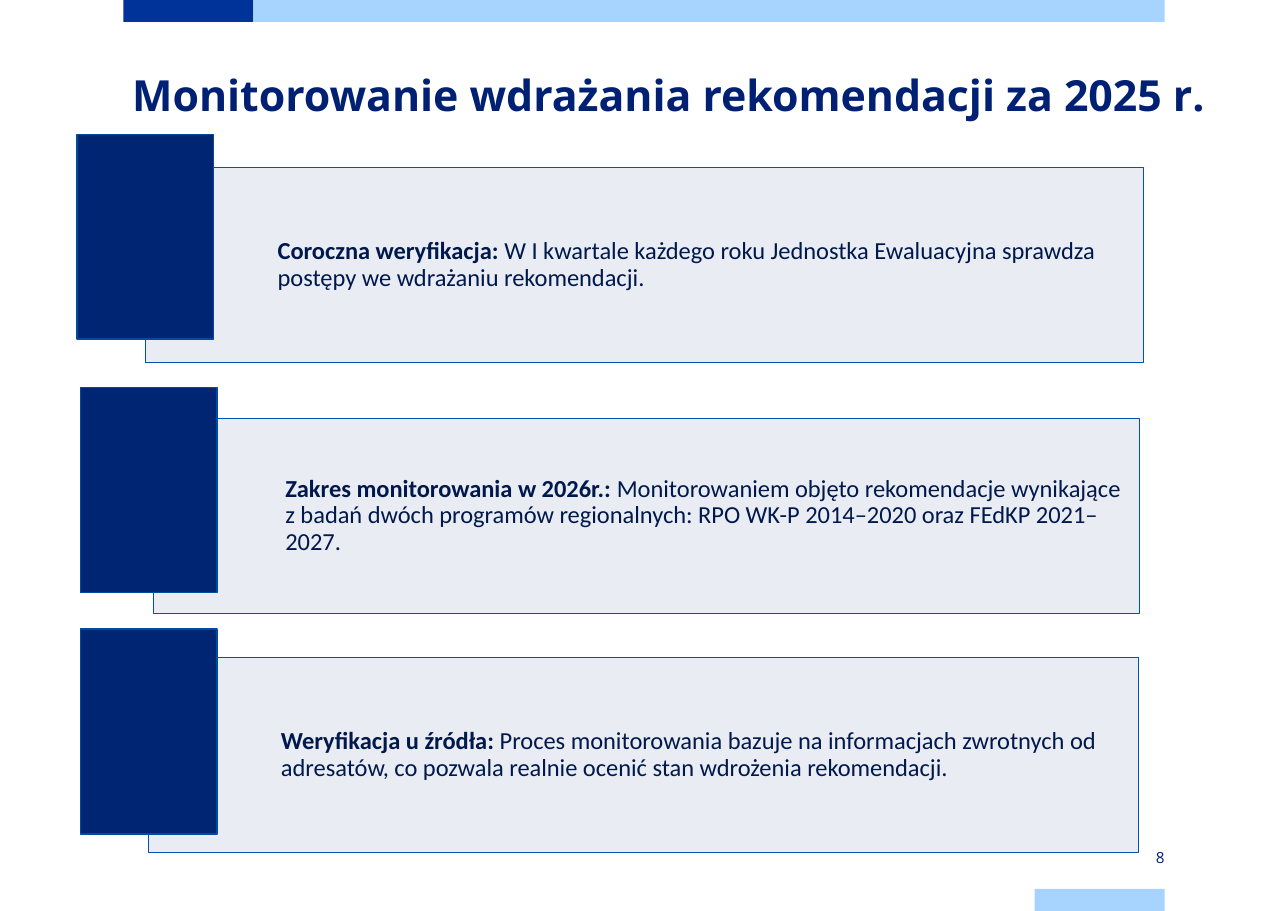
from lxml.etree import SubElement
from pptx import Presentation
from pptx.dml.color import RGBColor as Rgb
from pptx.enum.shapes import MSO_SHAPE as Kind
from pptx.enum.text import MSO_ANCHOR as Anchor, PP_ALIGN as Align
from pptx.oxml.ns import qn
from pptx.util import Inches, Pt

NAVY = "002073"
SKY = "A6D3FF"
ROWS = [
    (1.32, 1.52, 9.06, 0.7, 1.22, "Coroczna weryfikacja: ",
     "W I kwartale każdego roku Jednostka Ewaluacyjna sprawdza postępy "
     "we wdrażaniu rekomendacji."),
    (1.39, 3.8, 8.95, 0.73, 3.52, "Zakres monitorowania w 2026r.: ",
     "Monitorowaniem objęto rekomendacje wynikające z badań dwóch programów "
     "regionalnych: RPO WK-P 2014–2020 oraz FEdKP 2021–2027."),
    (1.35, 5.97, 8.98, 0.73, 5.71, "Weryfikacja u źródła: ",
     "Proces monitorowania bazuje na informacjach zwrotnych od adresatów, "
     "co pozwala realnie ocenić stan wdrożenia rekomendacji."),
]


def color(target, code):
    target.rgb = Rgb.from_string(code)


def add_rect(slide, box, fill, line=None, width=1, alpha=None):
    rect = slide.shapes.add_shape(Kind.RECTANGLE, *map(Inches, box))
    rect.shadow.inherit = False
    rect.fill.solid()
    color(rect.fill.fore_color, fill)
    if alpha:
        tone = rect.fill._xPr.find(qn("a:solidFill"))[0]
        SubElement(tone, qn("a:alpha"), val=str(alpha * 1000))
    if line:
        color(rect.line.color, line)
        rect.line.width = Pt(width)
    else:
        rect.line.fill.background()
    return rect


def set_frame(shape, insets, anchor, align=Align.LEFT):
    frame = shape.text_frame
    frame.word_wrap = True
    frame.vertical_anchor = anchor
    (frame.margin_left, frame.margin_top,
     frame.margin_right, frame.margin_bottom) = map(Inches, insets)
    para = frame.paragraphs[0]
    para.alignment = align
    return para


def add_run(para, text, size, font, code, bold=False):
    run = para.add_run()
    run.text = text
    run.font.size = Pt(size)
    run.font.name = font
    run.font.bold = bold
    color(run.font.color, code)


def add_box(slide, box, insets, anchor, align=Align.LEFT):
    shape = slide.shapes.add_textbox(*map(Inches, box))
    return set_frame(shape, insets, anchor, align)


def add_row(slide, left, top, width, tab_x, tab_y, head, body):
    panel = add_rect(slide, (left, top, width, 1.77), "CCD0E4", "0051B0", 0.5, 40)
    para = set_frame(panel, (1.2, 0.07, 0.07, 0.07), Anchor.MIDDLE)
    para.line_spacing = 0.9
    para.space_after = Pt(5.6)
    add_run(para, head, 16, "Calibri", "00194C", True)
    add_run(para, body, 16, "Calibri", "00194C")
    add_rect(slide, (tab_x, tab_y, 1.24, 1.86), "002673", "004AA0")


def main():
    deck = Presentation()
    deck.slide_width = Inches(11.69)
    deck.slide_height = Inches(8.27)
    slide = deck.slides.add_slide(deck.slide_layouts[6])

    add_rect(slide, (1.12, 0, 1.18, 0.2), "003399")
    add_rect(slide, (2.3, 0, 8.27, 0.2), SKY)
    add_rect(slide, (9.39, 8.07, 1.18, 0.2), SKY)

    title = add_box(slide, (1.2, 0.59, 9.76, 0.63), (0, 0, 0, 0), Anchor.TOP)
    title.line_spacing = Pt(36)
    add_run(title, "Monitorowanie wdrażania rekomendacji za 2025 r.",
            28, "Open Sans", NAVY, True)

    for row in ROWS:
        add_row(slide, *row)

    number = add_box(slide, (9.39, 7.68, 1.18, 0.2), (0, 0.08, 0, 0.08),
                     Anchor.MIDDLE, Align.RIGHT)
    add_run(number, "8", 10, "Open Sans", NAVY)
    deck.save("out.pptx")


if __name__ == "__main__":
    main()
